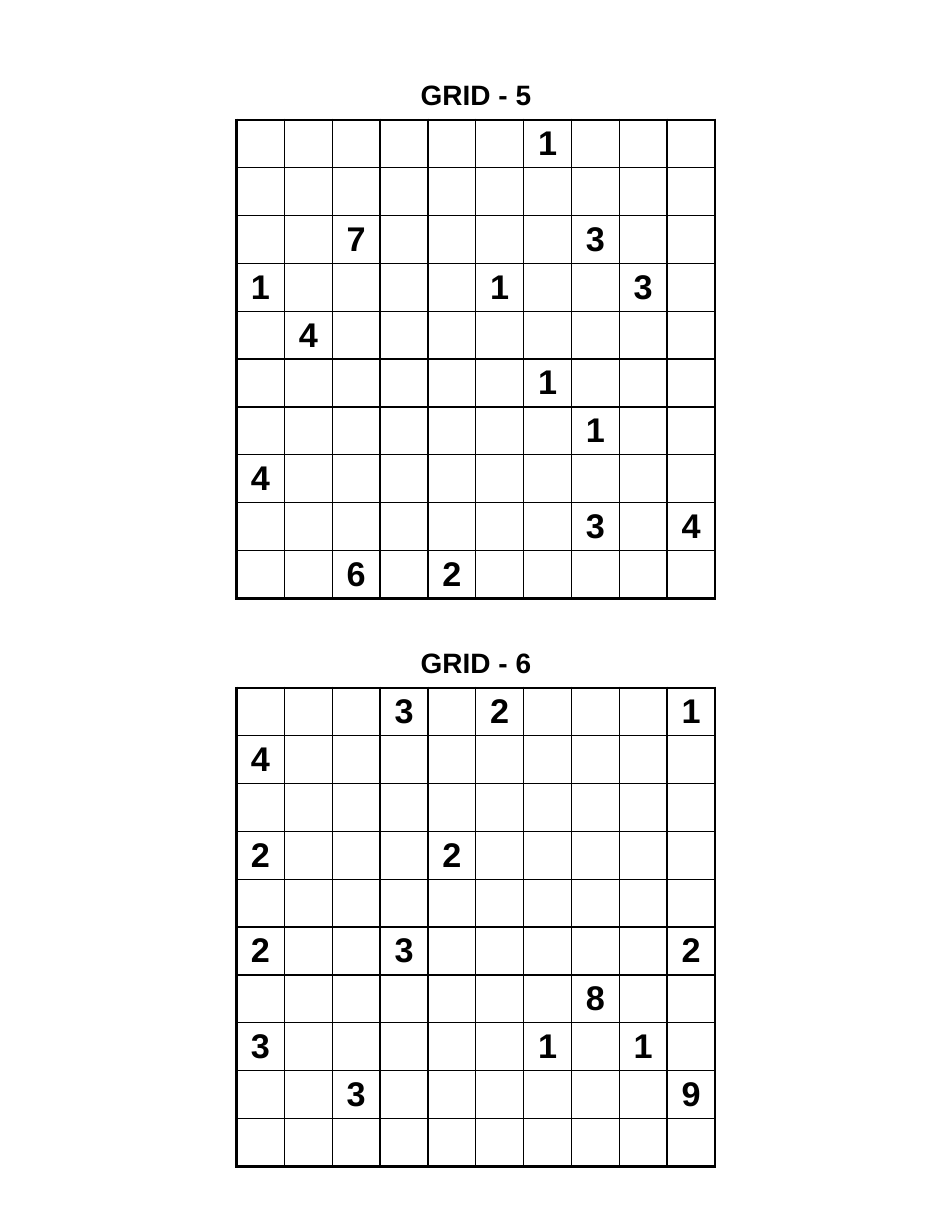
from lxml import etree
from pptx import Presentation
from pptx import util as u
from pptx.dml.color import RGBColor
from pptx.enum import text
from pptx.oxml.ns import qn

PAGE_W, PAGE_H = 21.59, 27.94
SIDE = 10.86
LEFT = (PAGE_W - SIDE) / 2
CAPTION_H = 0.76
CAPTION_TO_GRID = 0.97
BLACK, WHITE = "000000", "FFFFFF"

# Caption, top in cm, and one string per row with a dot for each empty cell
PUZZLES = [
    ("GRID - 5", 1.75, [
        "......1...",
        "..........",
        "..7....3..",
        "1....1..3.",
        ".4........",
        "......1...",
        ".......1..",
        "4.........",
        ".......3.4",
        "..6.2.....",
    ]),
    ("GRID - 6", 14.63, [
        "...2.2...1".replace("2", "3", 1),
        "4.........",
        "..........",
        "2...2.....",
        "..........",
        "2..3.....2",
        ".......8..",
        "3.....1.1.",
        "..3......9",
        "..........",
    ]),
]


def color(value):
    return RGBColor.from_string(value)


def write(tf, content, size):
    p = tf.paragraphs[0]
    p.alignment = text.PP_ALIGN.CENTER
    r = p.add_run()
    r.text = content
    r.font.name = "Arial"
    r.font.size = u.Pt(size)
    r.font.bold = True
    r.font.color.rgb = color(BLACK)


def clear_margins(box):
    box.margin_left = box.margin_right = box.margin_top = box.margin_bottom = 0


def add_caption(s, content, top):
    sp = s.shapes.add_textbox(u.Cm(LEFT), u.Cm(top), u.Cm(SIDE), u.Cm(CAPTION_H))
    tf = sp.text_frame
    tf.word_wrap = True
    tf.auto_size = text.MSO_AUTO_SIZE.SHAPE_TO_FIT_TEXT
    clear_margins(tf)
    write(tf, content, 18)


def set_border(cell, side, points):
    """Draw one side of a cell; side is L, R, T or B, called in that order."""
    ln = etree.SubElement(cell._tc.get_or_add_tcPr(), qn("a:ln" + side),
                          w=str(u.Pt(points)))
    fill = etree.SubElement(ln, qn("a:solidFill"))
    etree.SubElement(fill, qn("a:srgbClr"), val=BLACK)


def add_grid(s, rows, top):
    """Add a square table with thin inner lines and a thick outer frame."""
    n = len(rows)
    table = s.shapes.add_table(n, n, u.Cm(LEFT), u.Cm(top),
                               u.Cm(SIDE), u.Cm(SIDE)).table
    table.first_row = table.horz_banding = False
    for line in [*table.columns]:
        line.width = u.Cm(SIDE / n)
    for line in table.rows:
        line.height = u.Cm(SIDE / n)
    for i, row in enumerate(rows):
        for j, digit in enumerate(row):
            cell = table.cell(i, j)
            clear_margins(cell)
            cell.vertical_anchor = text.MSO_ANCHOR.MIDDLE
            outer = {"L": j == 0, "R": j == n - 1, "T": i == 0, "B": i == n - 1}
            for side, is_outer in outer.items():
                set_border(cell, side, 2 if is_outer else 1)
            cell.fill.solid()
            cell.fill.fore_color.rgb = color(WHITE)
            if digit != ".":
                write(cell.text_frame, digit, 22)


def main():
    prs = Presentation()
    prs.slide_width, prs.slide_height = u.Cm(PAGE_W), u.Cm(PAGE_H)
    s = prs.slides.add_slide(prs.slide_layouts[6])
    for caption, top, rows in PUZZLES:
        add_caption(s, caption, top)
        add_grid(s, rows, top + CAPTION_TO_GRID)
    prs.save("out.pptx")


if __name__ == "__main__":
    main()
